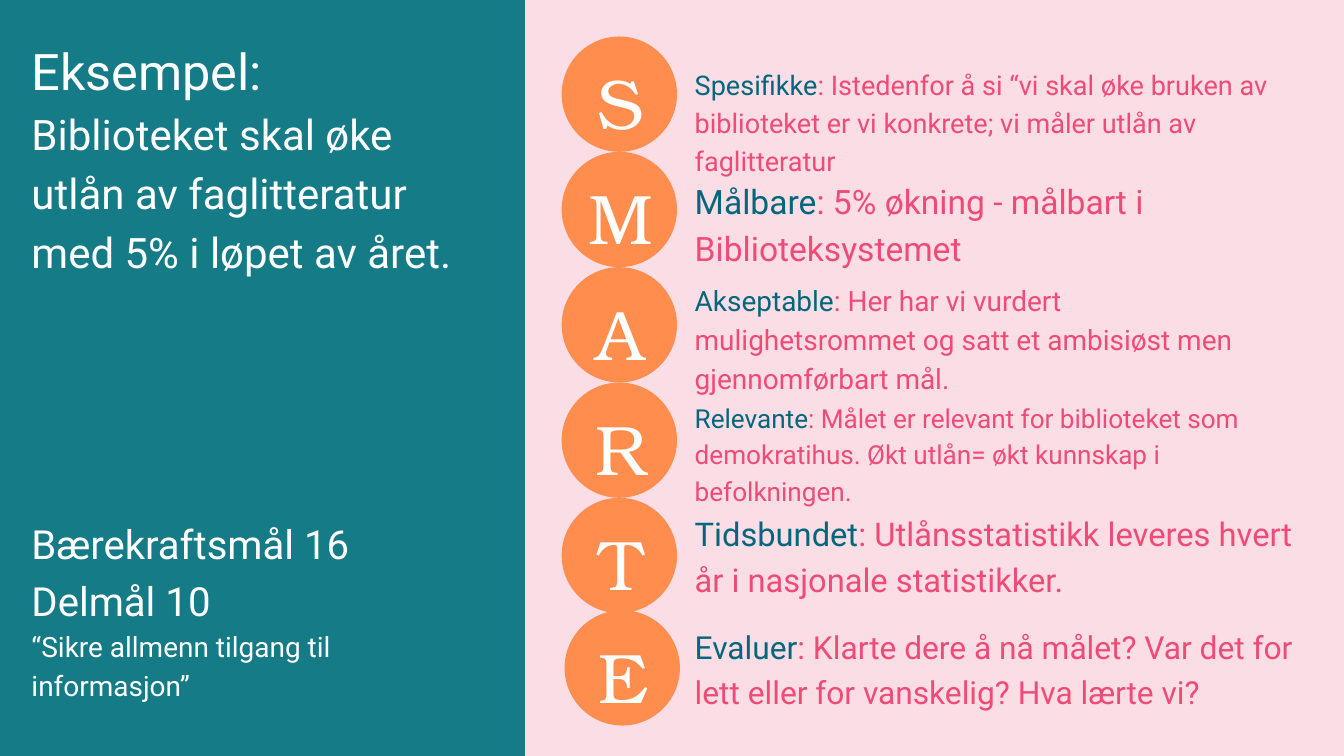
"""Build a slide that explains the SMARTE goals with a library example."""
from lxml import etree
from pptx import Presentation
from pptx.dml.color import RGBColor
from pptx.enum.shapes import MSO_SHAPE
from pptx.enum.text import MSO_ANCHOR, MSO_AUTO_SIZE, PP_ALIGN
from pptx.oxml.ns import qn
from pptx.util import Cm, Pt

OVAL, RECTANGLE = MSO_SHAPE.OVAL, MSO_SHAPE.RECTANGLE
LEFT, CENTER = PP_ALIGN.LEFT, PP_ALIGN.CENTER
TOP, NO_FIT = MSO_ANCHOR.TOP, MSO_AUTO_SIZE.NONE

COLORS = {"background": "FADDE5", "panel": "147B87", "circle": "FF8D4D",
          "light": "FFFFFF", "keyword": "03667C", "explanation": "EF4B77"}
SANS, SERIF = "Roboto", "TeX Gyre Bonum"
LEADING = 1.4
CIRCLE_SIZE = 4.36
CIRCLE_LEFT, CIRCLE_TOP = 21.23, 1.38
EXPLANATION_LEFT = 26.26

GOAL = [
    ("Biblioteket skal øke utlån av faglitteratur med 5% i løpet av året.", 45, 0),
    ("Bærekraftsmål 16", 43, 252),
    ("Delmål 10", 43, 0),
    ("“Sikre allmenn tilgang til informasjon”", 30, 0),
]
CRITERIA = [
    ("Spesifikke", ": Istedenfor å si “vi skal øke bruken av biblioteket er vi konkrete; "
     "vi måler utlån av faglitteratur", 29, (2.39, 23.32, 4.24)),
    ("Målbare", ": 5% økning - målbart i Biblioteksystemet", 36, (6.58, 21.74, 3.48)),
    ("Akseptable", ": Her har vi vurdert mulighetsrommet og satt et ambisiøst men "
     "gjennomførbart mål.", 30, (10.49, 21.74, 4.42)),
    ("Relevante", ": Målet er relevant for biblioteket som demokratihus. "
     "Økt utlån= økt kunnskap i befolkningen.", 28, (15.01, 22.89, 4.11)),
    ("Tidsbundet", ": Utlånsstatistikk leveres hvert år i nasjonale statistikker.",
     35, (19.18, 23.32, 3.4)),
    ("Evaluer", ": Klarte dere å nå målet? Var det for lett eller for vanskelig? "
     "Hva lærte vi?", 34, (23.5, 23.32, 3.28)),
]


class SlideBuilder:
    """Hold the style and the current slide."""

    def __init__(self, slide):
        self.slide = slide
        fill = slide.background.fill
        fill.solid()
        fill.fore_color.rgb = self.color("background")

    def color(self, role):
        """Return the colour of a role."""
        return RGBColor.from_string(COLORS[role])

    def block(self, kind, box, role):
        """Add a plain filled shape."""
        shape = self.slide.shapes.add_shape(kind, *map(Cm, box))
        shape.shadow.inherit = False
        shape.fill.solid()
        shape.fill.fore_color.rgb = self.color(role)
        shape.line.fill.background()
        return shape

    def frame(self, holder):
        """Prepare a text frame without margins."""
        frame = holder.text_frame
        frame.word_wrap = True
        frame.auto_size = NO_FIT
        frame.vertical_anchor = TOP
        frame.margin_left = frame.margin_right = 0
        frame.margin_top = frame.margin_bottom = 0
        return frame

    def paragraph(self, paragraph, parts, size, font=SANS, align=LEFT, before=0):
        """Fill a paragraph with (text, colour role) parts."""
        paragraph.alignment = align
        paragraph.line_spacing = Pt(size * LEADING)
        paragraph.space_before = Pt(before)
        properties = paragraph._p.get_or_add_pPr()
        properties.set("marL", "0")
        properties.set("indent", "0")
        etree.SubElement(properties, qn("a:buNone"))
        paragraph.font.size = Pt(size)
        paragraph.font.name = font
        for text, role in parts:
            run = paragraph.add_run()
            run.text = text
            run.font.color.rgb = self.color(role)

    def text(self, box, parts, size, font=SANS, align=LEFT):
        """Add a text box with one paragraph."""
        textbox = self.slide.shapes.add_textbox(*map(Cm, box))
        self.paragraph(self.frame(textbox).paragraphs[0], parts, size, font, align)

    def placeholder(self, index, box, lines):
        """Move a placeholder and fill it with (text, size, space before) lines."""
        holder = self.slide.placeholders[index]
        holder.left, holder.top, holder.width, holder.height = map(Cm, box)
        frame = self.frame(holder)
        for number, (text, size, before) in enumerate(lines):
            paragraph = frame.add_paragraph() if number else frame.paragraphs[0]
            self.paragraph(paragraph, [(text, "light")], size, before=before)

    def panel(self, box):
        """Add the side panel behind the title and the body."""
        panel = self.block(RECTANGLE, box, "panel")
        self.slide.shapes.title._element.addprevious(panel._element)

    def badge(self, letter, left, top):
        """Add a circle with its letter."""
        self.block(OVAL, (left, top, CIRCLE_SIZE, CIRCLE_SIZE), "circle")
        self.text((left + 0.1, top + 0.34, 4.27, 3.56), [(letter, "light")],
                  75, SERIF, CENTER)


def main():
    """Build and save the slide."""
    presentation = Presentation()
    presentation.slide_width, presentation.slide_height = Cm(50.8), Cm(28.58)
    builder = SlideBuilder(presentation.slides.add_slide(presentation.slide_layouts[1]))

    builder.panel((-0.48, -0.23, 20.32, 29.03))
    builder.placeholder(0, (1.19, 1.12, 16.94, 2.67), [("Eksempel:", 54, 0)])
    builder.placeholder(1, (1.19, 3.79, 16.94, 24.71), GOAL)

    last = len(CRITERIA) - 1
    for row, (keyword, explanation, size, (top, width, height)) in enumerate(CRITERIA):
        shift = 0.11 if row == last else 0
        builder.badge(keyword[0], CIRCLE_LEFT + shift,
                      CIRCLE_TOP + row * CIRCLE_SIZE - shift)
        builder.text((EXPLANATION_LEFT, top, width, height),
                     [(keyword, "keyword"), (explanation, "explanation")], size)

    presentation.save("out.pptx")


if __name__ == "__main__":
    main()
